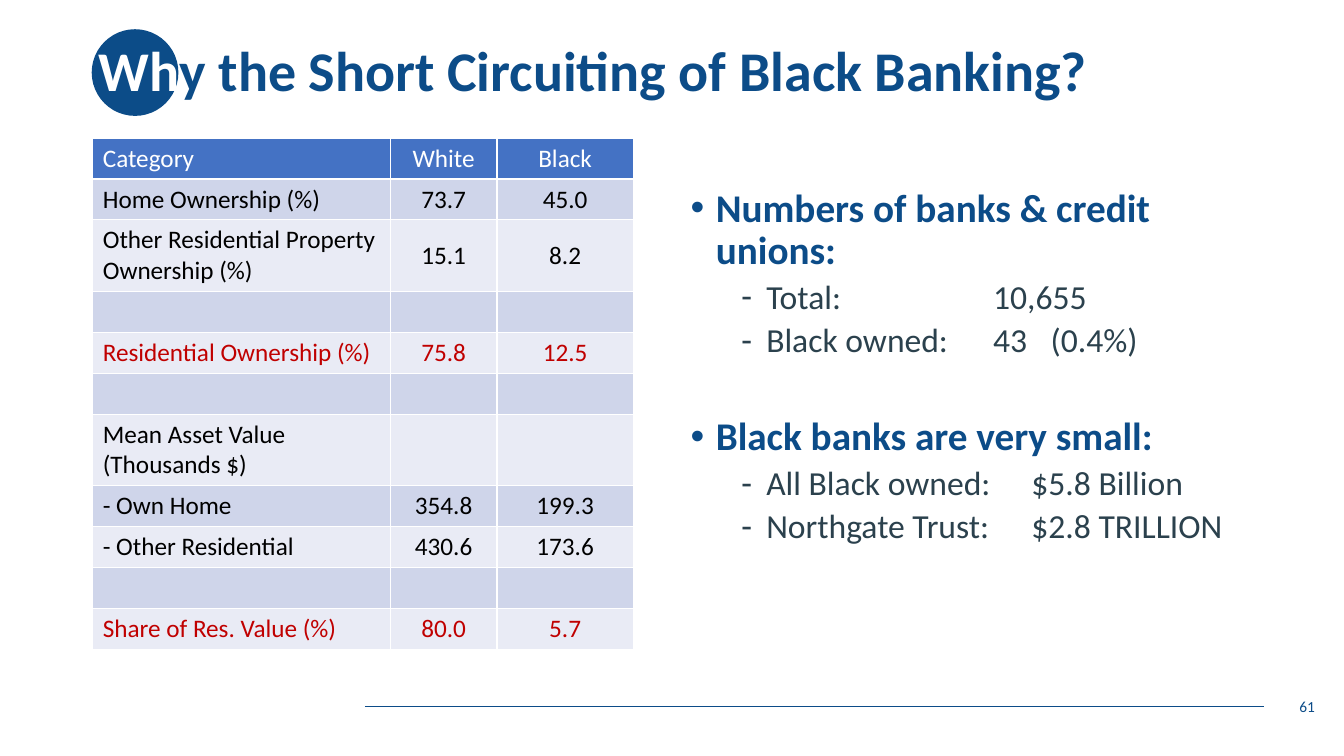
from lxml.etree import SubElement
from pptx import Presentation
from pptx.dml.color import RGBColor
from pptx.enum.shapes import MSO_CONNECTOR, MSO_SHAPE
from pptx.enum.text import MSO_ANCHOR, MSO_AUTO_SIZE, PP_ALIGN
from pptx.oxml.ns import qn
from pptx.util import Inches, Pt

NAVY, SLATE, RED, WHITE, BLACK = "0C4C88", "2B414D", "C00000", "FFFFFF", "000000"
HEADER_FILL, BAND_FILLS = "4472C4", ("E9EBF5", "CFD5EA")

# Label, white value, black value, text colour
OWNERSHIP_ROWS = [
    ("Category", "White", "Black", WHITE),
    ("Home Ownership (%)", "73.7", "45.0", BLACK),
    ("Other Residential Property Ownership (%)", "15.1", "8.2", BLACK),
    ("", "", "", BLACK),
    ("Residential Ownership (%)", "75.8", "12.5", RED),
    ("", "", "", BLACK),
    ("Mean Asset Value\n(Thousands $)", "", "", BLACK),
    ("- Own Home", "354.8", "199.3", BLACK),
    ("- Other Residential", "430.6", "173.6", BLACK),
    ("", "", "", BLACK),
    ("Share of Res. Value (%)", "80.0", "5.7", RED),
]
COLUMN_WIDTHS = (2.95, 1.06, 1.35)
TWO_LINE_ROWS = (2, 6)

# Text, level, space before in points, tab stops in inches
BANK_POINTS = [
    ("Numbers of banks & credit unions:", 0, 0, ()),
    ("Total:\t10,655", 1, 5, (3,)),
    ("Black owned:\t43\t(0.4%)", 1, 5, (3, 3.57)),
    ("Black banks are very small:", 0, 41, ()),
    ("All Black owned:\t$5.8 Billion", 1, 5, (3.38,)),
    ("Northgate Trust:\t$2.8 TRILLION", 1, 5, (3.38,)),
]


def rgb(value):
    return RGBColor.from_string(value)


def place(shape, *box):
    shape.left, shape.top, shape.width, shape.height = map(Inches, box)


class SlideBuilder:
    """Holds the slide and its type style, with one method per element."""

    font_name = "Calibri"

    def __init__(self, slide):
        self.slide = slide

    def style(self, font, size, color, bold=False):
        font.name, font.size, font.bold = self.font_name, Pt(size), bold
        font.color.rgb = rgb(color)

    def rule(self, left, right, y):
        line = self.slide.shapes.add_connector(
            MSO_CONNECTOR.STRAIGHT, Inches(left), Inches(y), Inches(right), Inches(y))
        line.line.color.rgb = rgb(NAVY)
        line.line.width = Pt(0.5)
        SubElement(line.element.spPr, qn("a:effectLst"))

    def disc(self, left, top, size):
        disc = self.slide.shapes.add_shape(
            MSO_SHAPE.OVAL, Inches(left), Inches(top), Inches(size), Inches(size))
        disc.shadow.inherit = False
        disc.fill.solid()
        disc.fill.fore_color.rgb = rgb(NAVY)
        disc.line.fill.background()

    def title(self, parts, *box):
        """Fill the title from (text, colour) parts and bring it to the front."""
        title = self.slide.shapes.title
        place(title, *box)
        title.element.getparent().append(title.element)
        frame = title.text_frame
        frame.auto_size = MSO_AUTO_SIZE.NONE
        frame.vertical_anchor = MSO_ANCHOR.MIDDLE
        paragraph = frame.paragraphs[0]
        paragraph.alignment = PP_ALIGN.LEFT
        paragraph.line_spacing = 0.9
        for text, color in parts:
            run = paragraph.add_run()
            run.text = text
            self.style(run.font, 40, color, bold=True)

    def table(self, rows, left, top, height, tall_height):
        graphic = self.slide.shapes.add_table(
            len(rows), len(COLUMN_WIDTHS), Inches(left), Inches(top),
            Inches(sum(COLUMN_WIDTHS)), Inches(height))
        table = graphic.table
        for column, width in zip(table.columns, COLUMN_WIDTHS):
            column.width = Inches(width)
        tall_count = len(TWO_LINE_ROWS)
        row_height = (height - tall_count * tall_height) / (len(rows) - tall_count)
        for r, (*texts, color) in enumerate(rows):
            table.rows[r].height = Inches(tall_height if r in TWO_LINE_ROWS else row_height)
            for c, text in enumerate(texts):
                cell = table.cell(r, c)
                cell.text = text
                cell.fill.solid()
                cell.fill.fore_color.rgb = rgb(BAND_FILLS[r % 2] if r else HEADER_FILL)
                if r and c:
                    cell.vertical_anchor = MSO_ANCHOR.MIDDLE
                for paragraph in cell.text_frame.paragraphs:
                    paragraph.alignment = PP_ALIGN.CENTER if c else PP_ALIGN.LEFT
                    self.style(paragraph.font, 18, color)

    def bullets(self, points, *box):
        body = self.slide.placeholders[1]
        place(body, *box)
        frame = body.text_frame
        frame.auto_size = MSO_AUTO_SIZE.NONE
        frame.text = "\n".join(point[0] for point in points)
        for paragraph, (_, level, space, stops) in zip(frame.paragraphs, points):
            paragraph.level = level
            paragraph.line_spacing = 0.9
            paragraph.space_before = Pt(space)
            self.mark(paragraph, "-" if level else "•", 0.75 if level else 0.25, stops)
            if level:
                self.style(paragraph.font, 24, SLATE)
            else:
                self.style(paragraph.font, 28, NAVY, bold=True)

    def mark(self, paragraph, symbol, indent, stops):
        """Give a paragraph its bullet, hanging indent and tab stops."""
        properties = paragraph._p.get_or_add_pPr()
        properties.set("marL", str(Inches(indent)))
        properties.set("indent", str(Inches(-0.25)))
        SubElement(properties, qn("a:buFont"), typeface="Arial")
        SubElement(properties, qn("a:buChar"), char=symbol)
        if stops:
            tabs = SubElement(properties, qn("a:tabLst"))
            for stop in stops:
                SubElement(tabs, qn("a:tab"), pos=str(Inches(stop)), algn="l")

    def page_number(self, text, *box):
        frame = self.slide.shapes.add_textbox(*map(Inches, box)).text_frame
        frame.word_wrap = True
        frame.vertical_anchor = MSO_ANCHOR.MIDDLE
        paragraph = frame.paragraphs[0]
        paragraph.text = text
        paragraph.alignment = PP_ALIGN.RIGHT
        self.style(paragraph.font, 11, NAVY)


def main():
    presentation = Presentation()
    presentation.slide_width, presentation.slide_height = Inches(13.33), Inches(7.5)
    builder = SlideBuilder(presentation.slides.add_slide(presentation.slide_layouts[1]))
    builder.rule(3.62, 12.54, 7.01)
    builder.disc(0.91, 0.29, 0.86)
    builder.title([("Wh", WHITE), ("y the Short Circuiting of Black Banking?", NAVY)],
                  0.88, 0, 11.5, 1.45)
    builder.table(OWNERSHIP_ROWS, 0.92, 1.37, 5.05, 0.71)
    builder.page_number("61", 10.14, 6.81, 3, 0.4)
    builder.bullets(BANK_POINTS, 6.75, 1.82, 5.67, 4.58)
    presentation.save("out.pptx")


if __name__ == "__main__":
    main()
